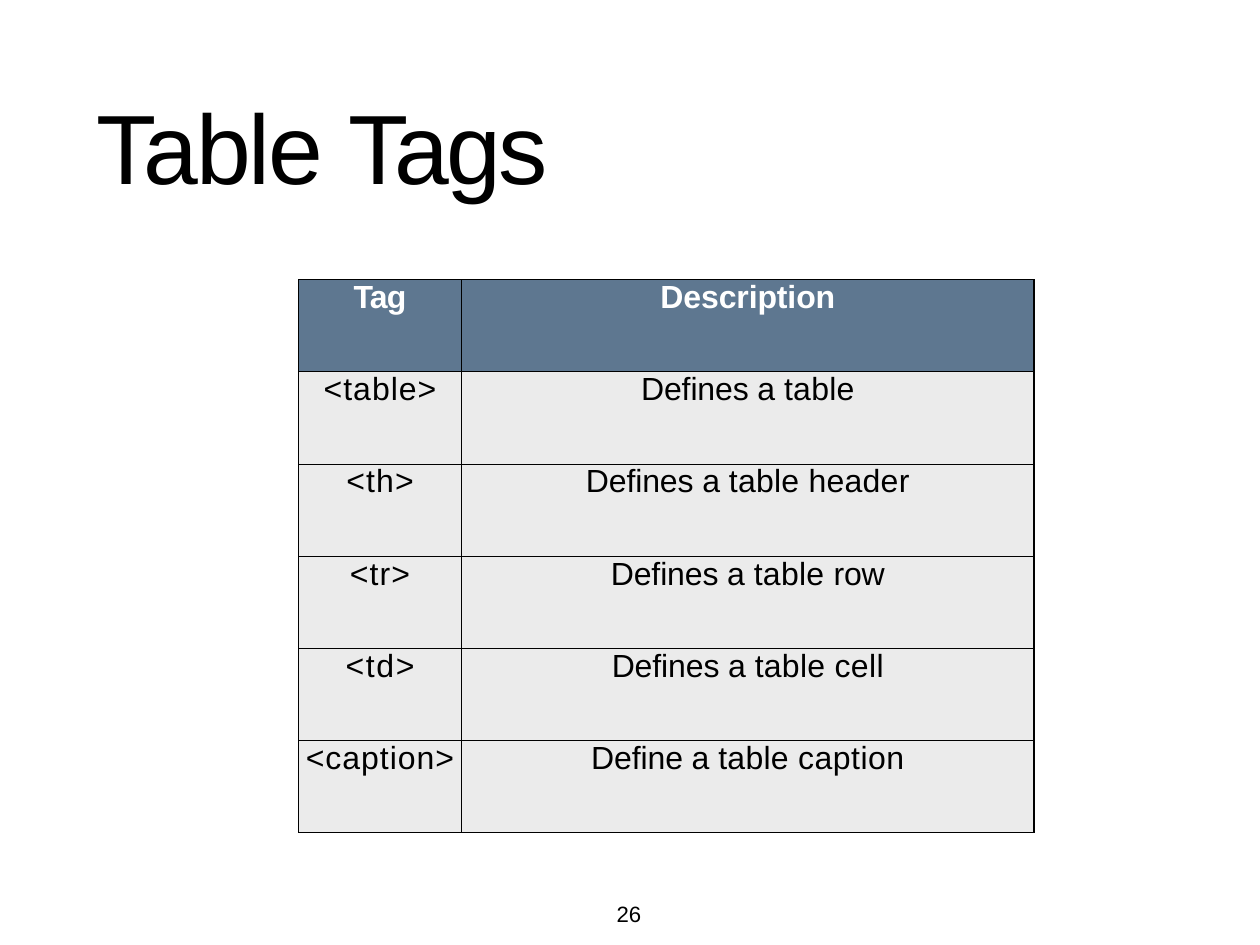
import dataclasses

import lxml.etree
import pptx
import pptx.dml.color
import pptx.enum.text
import pptx.oxml.ns
import pptx.util

Inches = pptx.util.Inches
Pt = pptx.util.Pt
Align = pptx.enum.text.PP_ALIGN


@dataclasses.dataclass(frozen=True)
class Theme:
    font: str = "Arial"
    ink: str = "000000"
    header_ink: str = "FFFFFF"
    header_fill: str = "5E7790"
    body_fill: str = "EBEBEB"
    title_size: float = 80
    table_size: float = 26
    number_size: float = 18
    cell_space: float = 21.5
    border_width: float = 1


class SlideBuilder:
    def __init__(self, deck, theme):
        self.theme = theme
        self.slide = deck.slides.add_slide(deck.slide_layouts[5])

    def set_text(self, frame, pieces, size, color, align=Align.LEFT, bold=False, indent=0):
        paragraph = frame.paragraphs[0]
        paragraph.alignment = align
        font = paragraph.font
        font.name, font.size, font.bold = self.theme.font, Pt(size), bold
        font.color.rgb = pptx.dml.color.RGBColor.from_string(color)
        if indent:
            properties = paragraph._p.get_or_add_pPr()
            properties.set("marL", str(Inches(indent)))
            properties.set("indent", "0")
        for words, spacing in pieces:
            run = paragraph.add_run()
            run.text = words
            run._r.get_or_add_rPr().set("spc", str(round(spacing * 100)))
        return paragraph

    def clear_margins(self, holder):
        holder.margin_left = holder.margin_top = 0
        holder.margin_right = holder.margin_bottom = 0

    def title(self, pieces, left, top, width, height):
        heading = self.slide.shapes.title
        heading.left, heading.top = Inches(left), Inches(top)
        heading.width, heading.height = Inches(width), Inches(height)
        frame = heading.text_frame
        self.clear_margins(frame)
        frame.margin_top = Inches(0.39)
        frame.word_wrap = True
        frame.auto_size = pptx.enum.text.MSO_AUTO_SIZE.NONE
        frame.vertical_anchor = pptx.enum.text.MSO_ANCHOR.TOP
        self.set_text(frame, pieces, self.theme.title_size, self.theme.ink, indent=0.69)

    def page_number(self, number, left, top, width, height):
        box = self.slide.shapes.add_textbox(
            Inches(left), Inches(top), Inches(width), Inches(height))
        frame = box.text_frame
        self.clear_margins(frame)
        frame.word_wrap = True
        paragraph = self.set_text(frame, [(number, -0.1)], self.theme.number_size,
                                  self.theme.ink, indent=0.03)
        paragraph.line_spacing = Pt(18.4)

    def border(self, cell):
        properties = cell._tc.get_or_add_tcPr()
        qn = pptx.oxml.ns.qn
        for side in ("lnL", "lnR", "lnT", "lnB"):
            line = lxml.etree.SubElement(properties, qn(f"a:{side}"),
                                         w=str(Pt(self.theme.border_width)))
            fill = lxml.etree.SubElement(line, qn("a:solidFill"))
            lxml.etree.SubElement(fill, qn("a:srgbClr"), val=self.theme.ink)

    def table(self, rows, left, top, column_widths, row_height):
        table = self.slide.shapes.add_table(
            len(rows), len(column_widths), Inches(left), Inches(top),
            Inches(sum(column_widths)), Inches(row_height * len(rows))).table
        table.horz_banding = False
        for column, width in zip(table.columns, column_widths):
            column.width = Inches(width)
        for row_index, row in enumerate(rows):
            header = row_index == 0
            ink = self.theme.header_ink if header else self.theme.ink
            fill = self.theme.header_fill if header else self.theme.body_fill
            for column_index, pieces in enumerate(row):
                cell = table.cell(row_index, column_index)
                self.clear_margins(cell)
                self.border(cell)
                cell.fill.solid()
                cell.fill.fore_color.rgb = pptx.dml.color.RGBColor.from_string(fill)
                paragraph = self.set_text(cell.text_frame, pieces, self.theme.table_size,
                                          ink, Align.CENTER, header)
                paragraph.space_before = Pt(self.theme.cell_space)


TAG_ROWS = [
    ([("Tag", -0.7)], [("Description", -0.1)]),
    ([("<table>", 0.8)], [("Defines a ", -0.1), ("table", 0.2)]),
    ([("<th>", 0.9)], [("Defines a ", -0.1), ("table header", 0.2)]),
    ([("<tr>", 0.9)], [("Defines a ", -0.1), ("table ", 0.2), ("row", -0.2)]),
    ([("<td>", 1.3)], [("Defines a ", -0.1), ("table ", 0.2), ("cell", 0.3)]),
    ([("<caption>", 0.8)], [("Define a ", -0.1), ("table ", 0.2), ("caption", 0.4)]),
]


def main():
    deck = pptx.Presentation()
    deck.slide_width, deck.slide_height = Inches(14.22), Inches(10.67)
    builder = SlideBuilder(deck, Theme())
    builder.page_number("26", 6.93, 10.21, 0.33, 0.28)
    builder.title([("Table ", -1.8), ("Tags", -2.2)], 0.4, 0.58, 13.41, 2.2)
    builder.table(TAG_ROWS, 3.37, 3.16, (1.84, 6.46), 1.04)
    deck.save("out.pptx")


if __name__ == "__main__":
    main()
